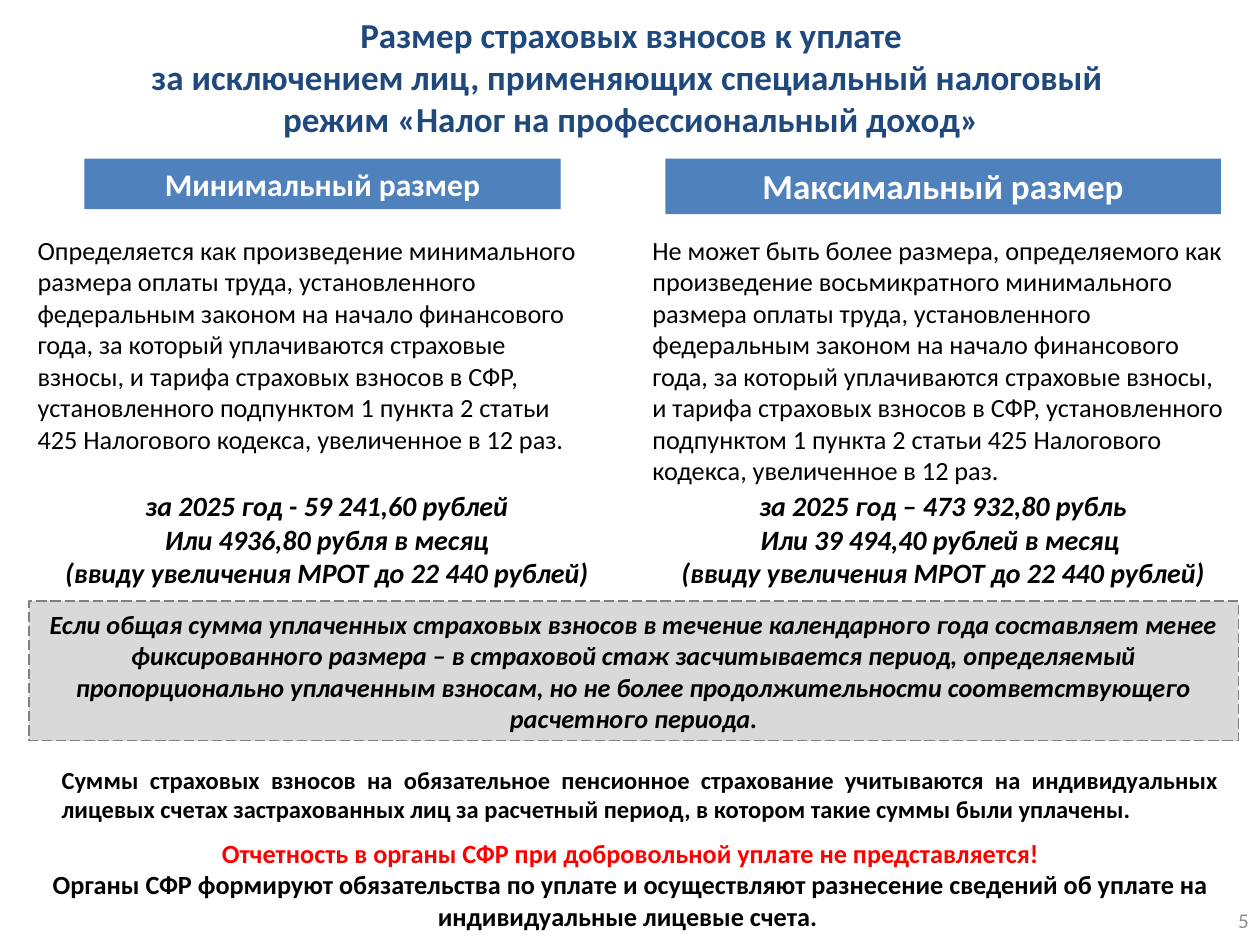
from pptx import Presentation
from pptx.dml.color import RGBColor
from pptx.enum import dml, shapes, text
from pptx.util import Inches, Pt

COLORS = {
    "navy": "1F497D", "blue": "4F81BD", "white": "FFFFFF", "black": "000000",
    "red": "FF0000", "panel": "D9D9D9", "border": "808080", "number": "8C8C8C",
}
LEFT, CENTER, RIGHT, JUSTIFY = (
    text.PP_ALIGN.LEFT, text.PP_ALIGN.CENTER, text.PP_ALIGN.RIGHT, text.PP_ALIGN.JUSTIFY)
TOP, MIDDLE = text.MSO_ANCHOR.TOP, text.MSO_ANCHOR.MIDDLE

TITLE = [
    "Размер страховых взносов к уплате",
    "за исключением лиц, применяющих специальный налоговый ",
    "режим «Налог на профессиональный доход»",
]
RULE_END = (
    "минимального размера оплаты труда, установленного федеральным законом на начало "
    "финансового года, за который уплачиваются страховые взносы, и тарифа страховых "
    "взносов в СФР, установленного подпунктом 1 пункта 2 статьи 425 Налогового кодекса, "
    "увеличенное в 12 раз.")
WAGE_NOTE = "(ввиду увеличения МРОТ до 22 440 рублей)"
COLUMNS = [
    {
        "heading": "Минимальный размер", "heading_size": 18,
        "heading_at": (0.67, 1.26, 3.78, 0.4),
        "rule": "Определяется как произведение " + RULE_END,
        "rule_at": (0.2, 1.81, 4.56, 1.87),
        "amounts": ["за 2025 год - 59 241,60 рублей", "Или 4936,80 рубля в месяц", WAGE_NOTE],
        "amounts_at": (0.23, 3.83, 4.73, 0.91),
    },
    {
        "heading": "Максимальный размер", "heading_size": 20,
        "heading_at": (5.28, 1.26, 4.41, 0.44),
        "rule": "Не может быть более размера, определяемого как произведение восьмикратного "
                + RULE_END,
        "rule_at": (5.08, 1.81, 4.77, 2.12),
        "amounts": ["за 2025 год – 473 932,80 рубль", "Или 39 494,40 рублей в месяц ", WAGE_NOTE],
        "amounts_at": (5.16, 3.83, 4.65, 0.91),
    },
]
PERIOD_NOTE = (
    "Если общая сумма уплаченных страховых взносов в течение календарного года составляет "
    "менее фиксированного размера – в страховой стаж засчитывается период, определяемый "
    "пропорционально уплаченным взносам, но не более продолжительности соответствующего "
    "расчетного периода.")
ACCOUNT_NOTE = (
    "Суммы страховых взносов на обязательное пенсионное страхование учитываются на "
    "индивидуальных лицевых счетах застрахованных лиц за расчетный период, в котором такие "
    "суммы были уплачены.")
REPORTING = [
    ("Отчетность в органы СФР при добровольной уплате не представляется!", "red"),
    ("Органы СФР формируют обязательства по уплате и осуществляют разнесение сведений об "
     "уплате на индивидуальные лицевые счета. ", "black"),
]


def color(name):
    return RGBColor.from_string(COLORS[name])


def write(box, lines, size, align=CENTER, anchor=TOP, bold=False, italic=False):
    frame = box.text_frame
    frame.word_wrap = True
    frame.auto_size = text.MSO_AUTO_SIZE.NONE
    frame.vertical_anchor = anchor
    for index, (line, ink) in enumerate(lines):
        para = frame.add_paragraph() if index else frame.paragraphs[0]
        para.alignment = align
        span = para.add_run()
        span.text = line
        span.font.name = "Calibri"
        span.font.size = Pt(size)
        span.font.bold = bold
        span.font.italic = italic
        span.font.color.rgb = color(ink)


def add_text(page, at, lines, size, **style):
    box = page.shapes.add_textbox(*map(Inches, at))
    write(box, lines, size, **style)


def add_panel(page, at, fill, lines, size, border=None, **style):
    panel = page.shapes.add_shape(shapes.MSO_SHAPE.RECTANGLE, *map(Inches, at))
    panel.shadow.inherit = False
    panel.fill.solid()
    panel.fill.fore_color.rgb = color(fill)
    if border:
        panel.line.color.rgb = color(border)
        panel.line.width = Pt(0.75)
        panel.line.dash_style = dml.MSO_LINE.LONG_DASH
    else:
        panel.line.fill.background()
    write(panel, lines, size, **style)


def inked(lines, ink="black"):
    return [(line, ink) for line in lines]


def main():
    deck = Presentation()
    deck.slide_width, deck.slide_height = Inches(10), Inches(7.5)
    page = deck.slides.add_slide(deck.slide_layouts[5])

    title = page.shapes.title
    title.left, title.top, title.width, title.height = map(Inches, (0.17, 0.07, 9.68, 1.07))
    write(title, inked(TITLE, "navy"), 20, anchor=MIDDLE, bold=True)

    for column in COLUMNS:
        add_panel(page, column["heading_at"], "blue", inked([column["heading"]], "white"),
                  column["heading_size"], bold=True)
        add_text(page, column["rule_at"], inked([column["rule"]]), 15, align=LEFT)
        add_text(page, column["amounts_at"], inked(column["amounts"]), 16,
                 bold=True, italic=True)

    add_text(page, (0.12, 6.59, 9.77, 0.86), REPORTING, 15, anchor=MIDDLE, bold=True)
    add_panel(page, (0.23, 4.77, 9.6, 1.11), "panel", inked([PERIOD_NOTE]), 15,
              border="border", anchor=MIDDLE, bold=True, italic=True)
    add_text(page, (7.68, 7.1, 2.33, 0.4), inked(["5"], "number"), 12,
             align=RIGHT, anchor=MIDDLE)
    add_text(page, (0.39, 6.02, 9.38, 0.57), inked([ACCOUNT_NOTE]), 14,
             align=JUSTIFY, bold=True)

    deck.save("out.pptx")


if __name__ == "__main__":
    main()
